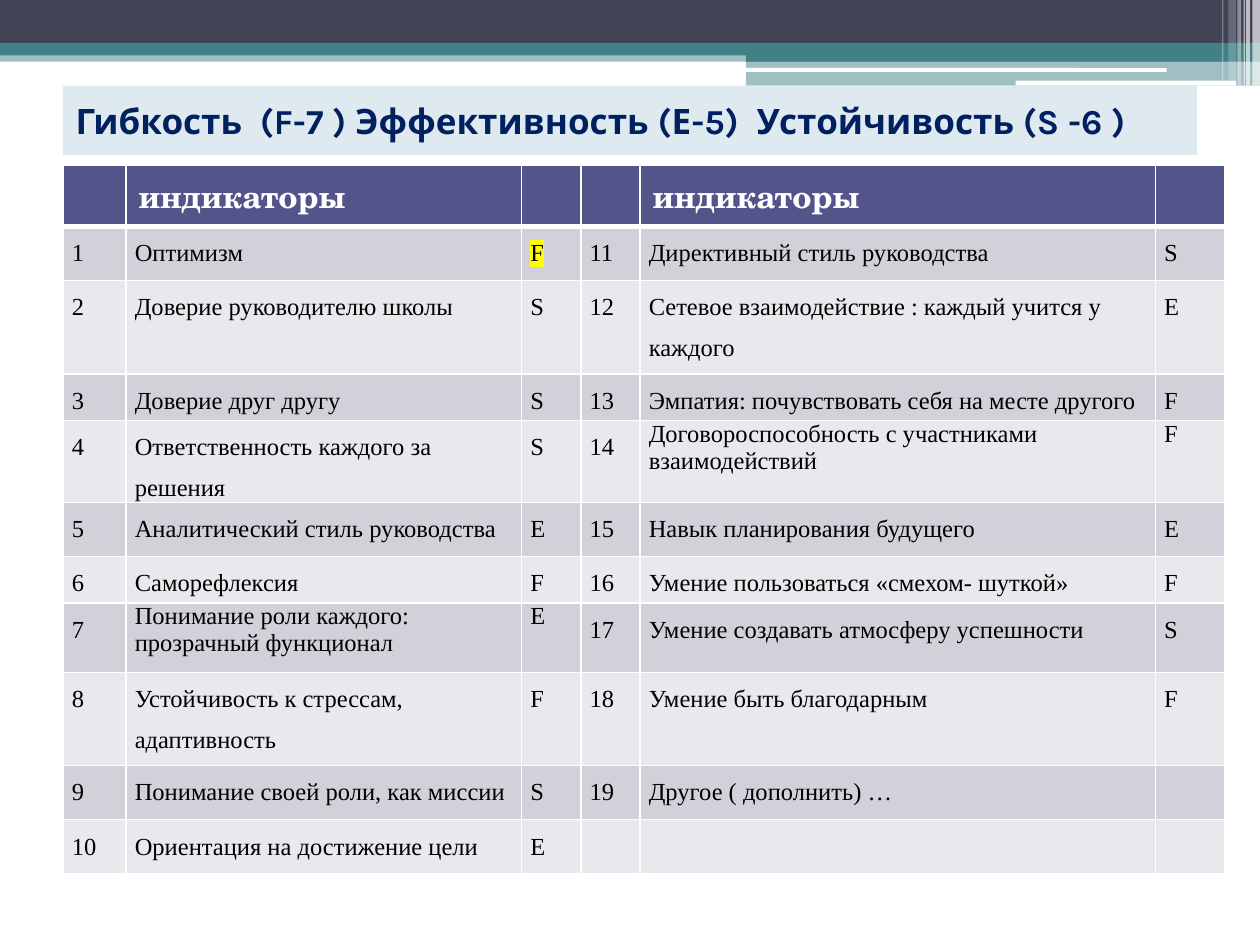
import dataclasses

import lxml.etree
import pptx
import pptx.dml.color
import pptx.enum.shapes
import pptx.enum.text
import pptx.oxml.ns
import pptx.util

Inches = pptx.util.Inches
Pt = pptx.util.Pt
SHAPE = pptx.enum.shapes.MSO_SHAPE
qn = pptx.oxml.ns.qn


@dataclasses.dataclass(frozen=True)
class Theme:
    dark: str = "424456"
    teal: str = "438086"
    white: str = "FFFFFF"
    black: str = "000000"
    title_fill: str = "DEE9F0"
    title_text: str = "002060"
    header_fill: str = "53548A"
    bands: tuple = ("D1D1DA", "E9E9ED")
    highlight: str = "FFFF00"
    title_font: str = "Karla"
    header_font: str = "TeX Gyre Schola"
    body_font: str = "Times New Roman"
    title_size: int = 20
    header_size: int = 18
    body_size: int = 14


def rgb(color):
    return pptx.dml.color.RGBColor.from_string(color)


def add_color(parent, color):
    return lxml.etree.SubElement(parent, qn("a:srgbClr"), val=color)


class SlideBuilder:
    def __init__(self, slide, theme):
        self.slide = slide
        self.theme = theme

    def fill(self, target, color, alpha=100):
        target.fill.solid()
        target.fill.fore_color.rgb = rgb(color)
        if alpha < 100:
            clr = target.fill._xPr.find(".//" + qn("a:srgbClr"))
            lxml.etree.SubElement(clr, qn("a:alpha"), val=str(alpha * 1000))

    def bar(self, left, top, width, height, color, alpha=100, kind=SHAPE.RECTANGLE):
        sp = self.slide.shapes.add_shape(
            kind, Inches(left), Inches(top), Inches(width), Inches(height))
        sp.shadow.inherit = False
        sp.line.fill.background()
        self.fill(sp, color, alpha)

    def run(self, p, text, font, size, color, bold=False, highlight=None):
        r = p.add_run()
        r.text = text
        r.font.size = Pt(size)
        r.font.bold = bold
        r.font.color.rgb = rgb(color)
        if highlight:
            mark = lxml.etree.SubElement(r.font._element, qn("a:highlight"))
            add_color(mark, highlight)
        r.font.name = font

    def title(self, text, left, top, width, height):
        t = self.theme
        sp = self.slide.shapes.title
        sp.left, sp.top = Inches(left), Inches(top)
        sp.width, sp.height = Inches(width), Inches(height)
        self.fill(sp, t.title_fill)
        tf = sp.text_frame
        tf.word_wrap = True
        tf.auto_size = pptx.enum.text.MSO_AUTO_SIZE.NONE
        tf.vertical_anchor = pptx.enum.text.MSO_ANCHOR.MIDDLE
        p = tf.paragraphs[0]
        p.alignment = pptx.enum.text.PP_ALIGN.LEFT
        self.run(p, text, t.title_font, t.title_size, t.title_text, bold=True)
        # Bring the title in front of the bars
        sp.element.getparent().append(sp.element)

    def borders(self, cell, bottom):
        props = cell._tc.get_or_add_tcPr()
        widths = {"a:lnL": 1, "a:lnR": 1, "a:lnT": 1, "a:lnB": bottom}
        for i, (tag, width) in enumerate(widths.items()):
            ln = lxml.etree.Element(qn(tag), w=str(Pt(width)))
            add_color(lxml.etree.SubElement(ln, qn("a:solidFill")), self.theme.white)
            props.insert(i, ln)

    def header_cell(self, cell, text):
        t = self.theme
        self.fill(cell, t.header_fill)
        self.borders(cell, bottom=3)
        if text:
            self.run(cell.text_frame.paragraphs[0], text, t.header_font,
                     t.header_size, t.white, bold=True)

    def body_cell(self, cell, text, band, spacing, highlight):
        t = self.theme
        self.fill(cell, band)
        self.borders(cell, bottom=1)
        if text:
            cell.margin_left = cell.margin_right = Inches(0.07)
            cell.margin_top = cell.margin_bottom = 0
            p = cell.text_frame.paragraphs[0]
            p.line_spacing = spacing
            self.run(p, text, t.body_font, t.body_size, t.black, highlight=highlight)

    def table(self, left, top, widths, heights, header, rows, tight, marked):
        frame = self.slide.shapes.add_table(
            len(heights), len(widths), Inches(left), Inches(top),
            Inches(sum(widths)), Inches(sum(heights)))
        table = frame.table
        for column, width in zip(table.columns, widths):
            column.width = Inches(width)
        for row, height in zip(table.rows, heights):
            row.height = Inches(height)
        for c, text in enumerate(header):
            self.header_cell(table.cell(0, c), text)
        for r, row in enumerate(rows, start=1):
            band = self.theme.bands[(r - 1) % 2]
            for c, text in enumerate(row):
                self.body_cell(table.cell(r, c), text, band,
                               1.0 if (r, c) in tight else 1.5,
                               self.theme.highlight if (r, c) in marked else None)


# Indicators with their group: F flexibility, E efficiency, S stability
LEFT_ITEMS = [
    ("Оптимизм", "F"),
    ("Доверие руководителю школы", "S"),
    ("Доверие друг другу", "S"),
    ("Ответственность каждого за решения", "S"),
    ("Аналитический стиль руководства", "E"),
    ("Саморефлексия", "F"),
    ("Понимание роли каждого: прозрачный функционал", "E"),
    ("Устойчивость к стрессам, адаптивность", "F"),
    ("Понимание своей роли, как миссии", "S"),
    ("Ориентация на достижение цели", "E"),
]
RIGHT_ITEMS = [
    ("Директивный стиль руководства", "S"),
    ("Сетевое взаимодействие : каждый учится у каждого", "E"),
    ("Эмпатия: почувствовать себя на месте другого", "F"),
    ("Договороспособность с участниками взаимодействий", "F"),
    ("Навык планирования будущего", "E"),
    ("Умение пользоваться «смехом- шуткой»", "F"),
    ("Умение создавать атмосферу успешности", "S"),
    ("Умение быть благодарным", "F"),
    ("Другое ( дополнить) …", ""),
    ("", ""),
]


def main():
    prs = pptx.Presentation()
    prs.slide_width, prs.slide_height = Inches(10), Inches(7.5)
    theme = Theme()
    s = SlideBuilder(prs.slides.add_slide(prs.slide_layouts[5]), theme)

    # Top bands
    s.bar(0, 0.4, 10, 0.09, theme.teal, 50)
    s.bar(0, 0, 10, 0.34, theme.dark)
    s.bar(0, 0.34, 10, 0.1, theme.teal)
    s.bar(5.92, 0.39, 4.08, 0.1, theme.teal)
    s.bar(5.92, 0.48, 4.08, 0.2, theme.teal, 50)
    s.bar(5.91, 0.54, 3.35, 0.03, theme.white, kind=SHAPE.ROUNDED_RECTANGLE)
    s.bar(8.06, 0.64, 1.75, 0.04, theme.white, kind=SHAPE.ROUNDED_RECTANGLE)

    # Translucent stripes in the corner
    for left, width, height, alpha in [
            (9.94, 0.06, 0.68, 65), (9.89, 0.03, 0.68, 65), (9.87, 0.01, 0.68, 60),
            (9.82, 0.03, 0.68, 40), (9.75, 0.06, 0.64, 20), (9.7, 0.01, 0.64, 30)]:
        s.bar(left, 0, width, height, theme.white, alpha)

    s.title("Гибкость  (F-7 ) Эффективность (Е-5)  Устойчивость (S -6 )",
            0.5, 0.68, 9, 0.55)

    # Indicator table, numbered down the left half and then the right
    rows = []
    for n, (left, right) in enumerate(zip(LEFT_ITEMS, RIGHT_ITEMS), start=1):
        right_number = str(n + len(LEFT_ITEMS)) if right[0] else ""
        rows.append((str(n), *left, right_number, *right))
    s.table(0.5, 1.31,
            widths=[0.5, 3.14, 0.47, 0.47, 4.09, 0.55],
            heights=[0.48, 0.43, 0.74, 0.37, 0.65, 0.43, 0.37, 0.55, 0.74, 0.43, 0.43],
            header=["", "индикаторы", "", "", "индикаторы", ""],
            rows=rows,
            tight={(4, 4), (4, 5), (7, 1), (7, 2)},
            marked={(1, 2)})

    prs.save("out.pptx")


if __name__ == "__main__":
    main()
